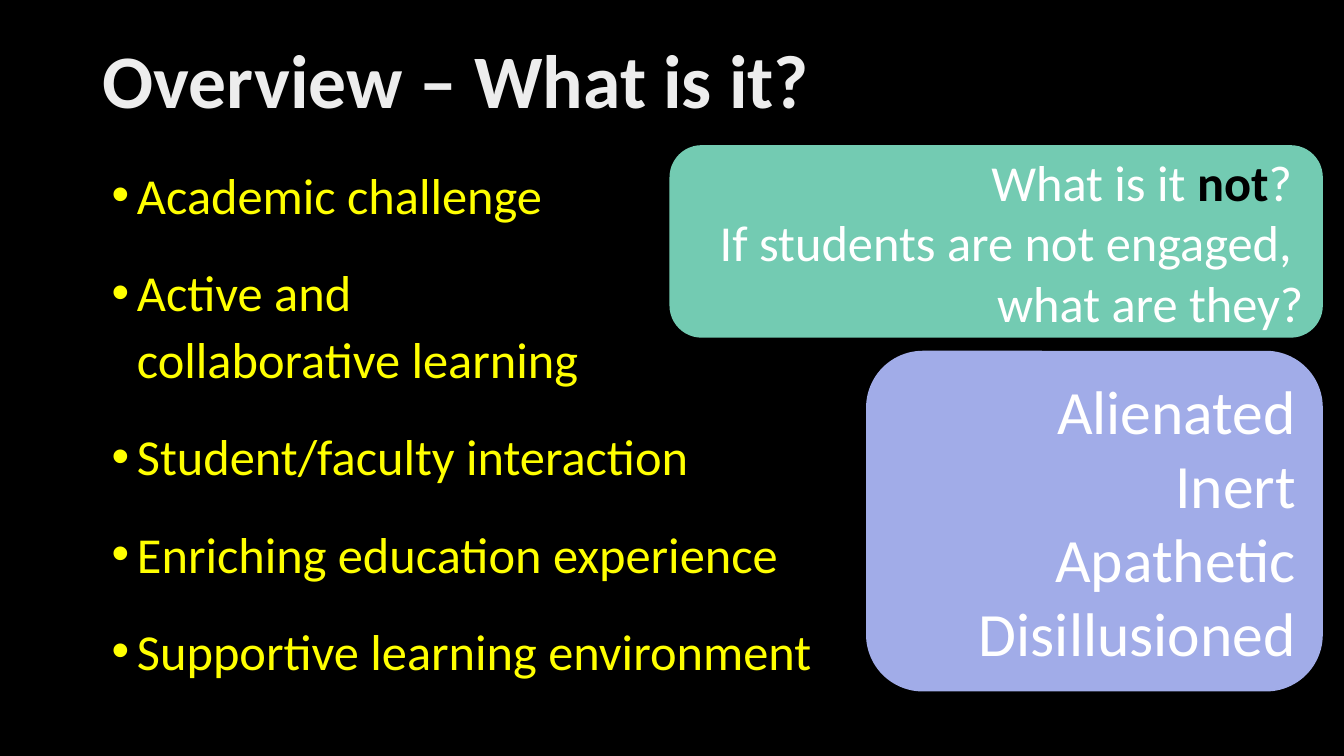
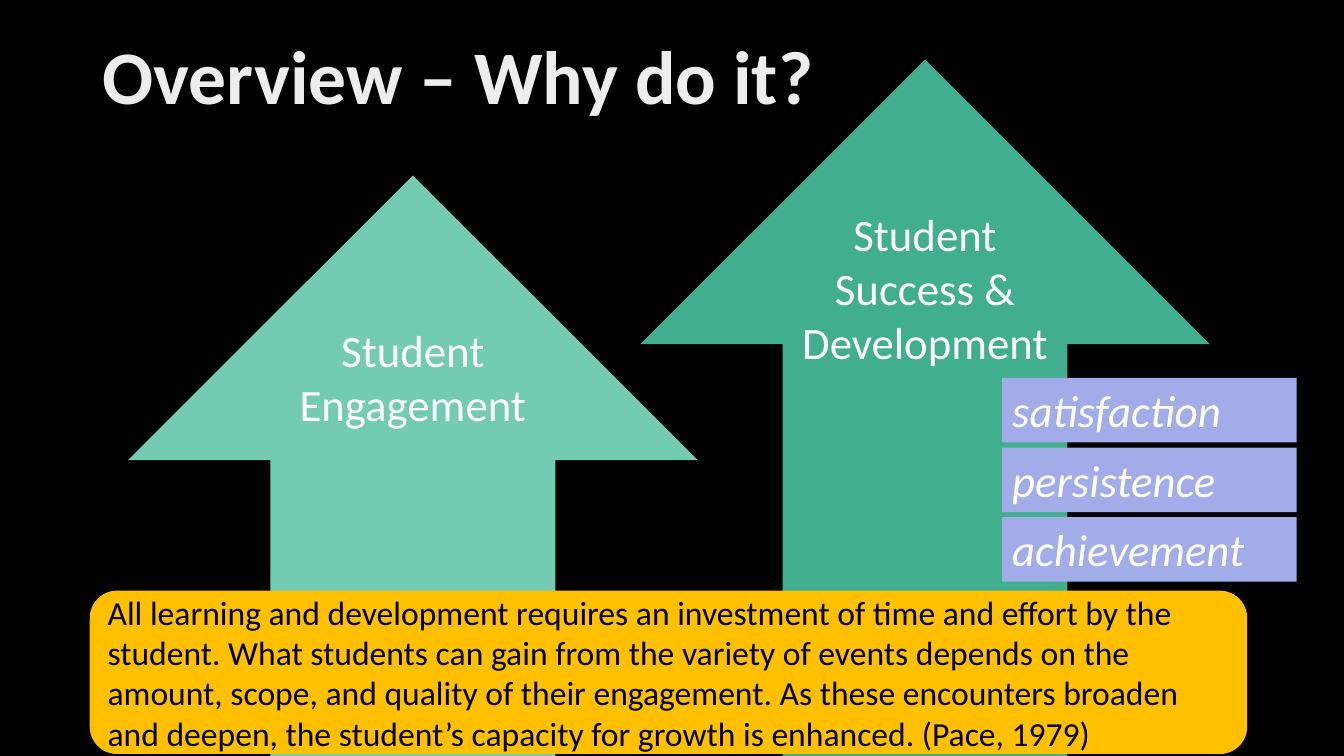
from lxml import etree
from pptx import Presentation
from pptx.dml.color import RGBColor
from pptx.enum.shapes import MSO_SHAPE
from pptx.enum.text import MSO_ANCHOR, PP_ALIGN
from pptx.oxml.ns import qn
from pptx.util import Inches, Pt

BLACK = RGBColor(0, 0, 0)
WHITE = RGBColor(0xFF, 0xFF, 0xFF)
SILVER = RGBColor(0xED, 0xED, 0xED)
YELLOW = RGBColor(0xFF, 0xFF, 0)
MINT = RGBColor(0x73, 0xCB, 0xB2)
GREEN = RGBColor(0x41, 0xAE, 0x8F)
LILAC = RGBColor(0xA1, 0xAC, 0xE8)
AMBER = RGBColor(0xFF, 0xC0, 0)

FONT = "Calibri"
LEFT, CENTER, RIGHT = PP_ALIGN.LEFT, PP_ALIGN.CENTER, PP_ALIGN.RIGHT
TOP, MIDDLE = MSO_ANCHOR.TOP, MSO_ANCHOR.MIDDLE
RECT, ROUND = MSO_SHAPE.RECTANGLE, MSO_SHAPE.ROUNDED_RECTANGLE
ARROW = MSO_SHAPE.UP_ARROW

POINTS = [
    "Academic challenge",
    "Active and \ncollaborative learning",
    "Student/faculty interaction",
    "Enriching education experience",
    "Supportive learning environment",
]
# A paragraph is a string, or a list of (text, bold, colour) runs.
ASK = [[
    ("What is it ", False, WHITE),
    ("not", True, BLACK),
    ("? \nIf students are not engaged, \nwhat are they?", False, WHITE),
]]
MOODS = ["Alienated", "Inert", "Apathetic", "Disillusioned"]

ARROWS = [
    (["Student", "Engagement"], (1.27, 1.74, 5.65, 5.95), MINT),
    (["Student Success & Development"], (6.35, 0.59, 5.65, 7.18), GREEN),
]
GAINS = ["satisfaction", "persistence", "achievement"]
GAIN_TOP, GAIN_STEP = 3.75, 0.69
QUOTE = [
    "All learning and development requires an investment of time and effort by the",
    "student. What students can gain from the variety of events depends on the",
    "amount, scope, and quality of their engagement. As these encounters broaden",
    "and deepen, the student’s capacity for growth is enhanced. (Pace, 1979)",
]


def add_bullet(para):
    props = para._p.get_or_add_pPr()
    indent = Inches(0.25)
    props.set("marL", str(indent))
    props.set("indent", str(-indent))
    etree.SubElement(props, qn("a:buFont")).set("typeface", "Arial")
    etree.SubElement(props, qn("a:buChar")).set("char", "•")


def write(shape, paras, size=32, color=WHITE, bold=False, italic=False,
          align=LEFT, anchor=TOP, line=None, before=0, after=0, bullet=False):
    frame = shape.text_frame
    frame.word_wrap = True
    frame.vertical_anchor = anchor
    for i, item in enumerate(paras):
        para = frame.add_paragraph() if i else frame.paragraphs[0]
        para.alignment = align
        para.line_spacing = line
        para.space_before = Pt(before if i else 0)
        para.space_after = Pt(after)
        if bullet:
            add_bullet(para)
        runs = [(item, bold, color)] if isinstance(item, str) else item
        for text, heavy, tint in runs:
            for j, part in enumerate(text.split("\n")):
                if j:
                    para.add_line_break()
                run = para.add_run()
                run.text = part
                font = run.font
                font.name, font.size = FONT, Pt(size)
                font.bold, font.italic = heavy, italic
                font.color.rgb = tint


def add_text(slide, paras, box, **style):
    shape = slide.shapes.add_textbox(*map(Inches, box))
    write(shape, paras, **style)


def add_block(slide, kind, paras, box, fill, **style):
    shape = slide.shapes.add_shape(kind, *map(Inches, box))
    shape.shadow.inherit = False
    shape.fill.solid()
    shape.fill.fore_color.rgb = fill
    shape.line.fill.background()
    write(shape, paras, **style)


def add_slide(deck, title, top):
    slide = deck.slides.add_slide(deck.slide_layouts[6])
    slide.background.fill.solid()
    slide.background.fill.fore_color.rgb = BLACK
    add_text(slide, [title], (0.92, top, 11.5, 1.45), size=54, color=SILVER,
             bold=True, anchor=MIDDLE, line=0.9)
    return slide


def build_what(deck):
    slide = add_slide(deck, "Overview – What is it?", 0.11)
    add_text(slide, POINTS, (1.01, 1.52, 11.19, 5.36), size=36, color=YELLOW,
             line=1.1, before=10, after=12, bullet=True)
    add_block(slide, ROUND, ASK, (6.64, 1.44, 6.48, 1.91), MINT, size=36,
              align=RIGHT, anchor=MIDDLE)
    add_block(slide, ROUND, MOODS, (8.59, 3.48, 4.53, 3.38), LILAC, size=44,
              align=RIGHT, anchor=MIDDLE)


def build_why(deck):
    slide = add_slide(deck, "Overview – Why do it?", 0.07)
    for label, box, fill in ARROWS:
        add_block(slide, ARROW, label, box, fill, align=CENTER)
    for i, gain in enumerate(GAINS):
        box = (9.94, GAIN_TOP + i * GAIN_STEP, 2.92, 0.64)
        add_block(slide, RECT, [gain], box, LILAC, italic=True)
    add_block(slide, ROUND, QUOTE, (0.89, 5.86, 11.48, 1.62), AMBER, size=24,
              color=BLACK, anchor=MIDDLE)


def main():
    deck = Presentation()
    deck.slide_width, deck.slide_height = Inches(13.33), Inches(7.5)
    build_what(deck)
    build_why(deck)
    deck.save("out.pptx")


if __name__ == "__main__":
    main()
